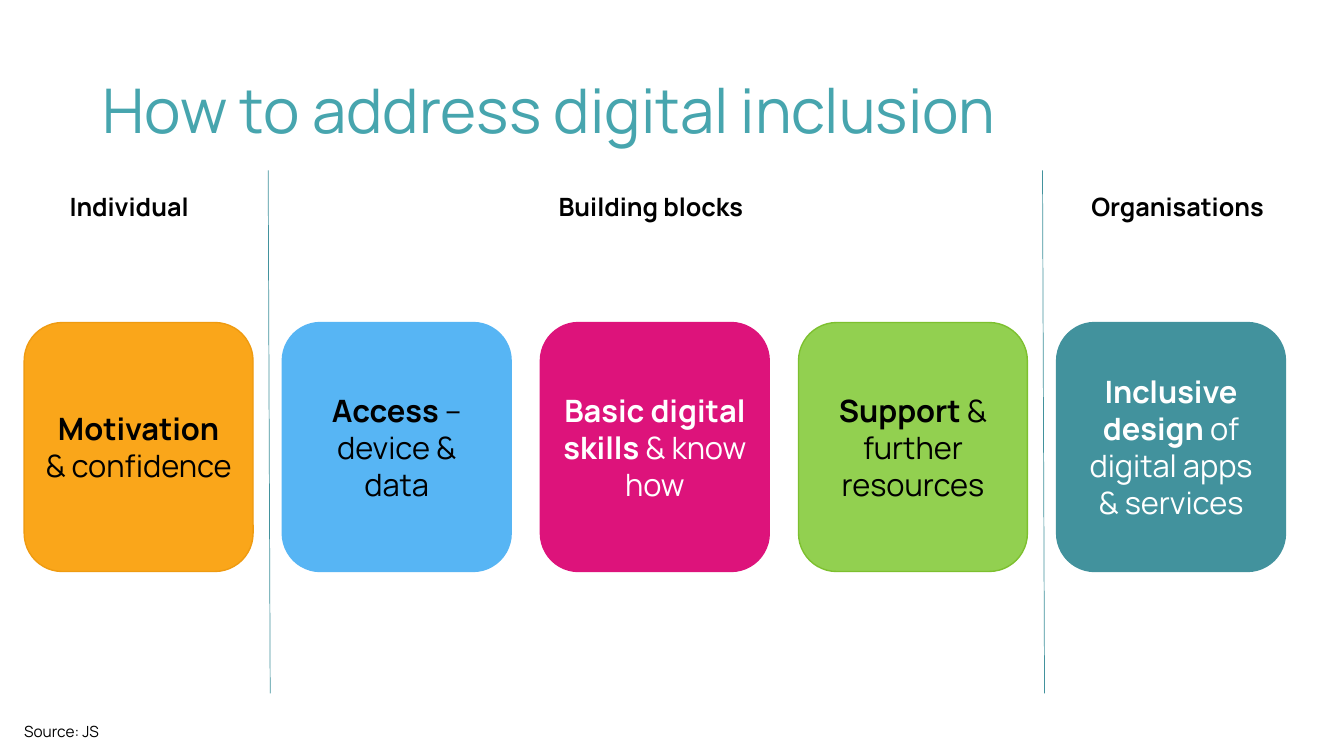
from dataclasses import dataclass

from lxml import etree
from pptx import Presentation
from pptx import util as u
from pptx.dml.color import RGBColor
from pptx.enum import shapes, text
from pptx.oxml.ns import qn


@dataclass(frozen=True)
class Theme:
    font: str = "Manrope"
    black: str = "000000"
    white: str = "FFFFFF"
    title: str = "47A5AE"
    teal: str = "42929D"
    amber: str = "FAA61A"
    amber_edge: str = "EF9B11"
    blue: str = "57B5F4"
    pink: str = "DD137B"
    green: str = "92D050"
    green_edge: str = "7DC02F"
    title_size: float = 44
    card_size: float = 22
    heading_size: float = 18
    source_size: float = 11


THEME = Theme()
WIDTH, HEIGHT = 13.33, 7.5
MARGIN, PITCH = 0.24, 2.56
CARD_WIDTH, CARD_HEIGHT, CARD_TOP = 2.27, 2.47, 3.2
HEADING_TOP = 1.85
DIVIDER_TOP, DIVIDER_BOTTOM = 1.69, 6.88
DIVIDER_GAP, DIVIDER_LEAN = 0.14, 0.02

HEADINGS = [
    ("Individual", 0, 0.15, 1.78),
    ("Building blocks", 2, -0.52, 3.23),
    ("Organisations", 4, 0.03, 2.34),
]

CARDS = [
    ("Motivation ", "& confidence", THEME.amber, THEME.amber_edge, THEME.black),
    ("Access ", "– device & data", THEME.blue, THEME.blue, THEME.black),
    ("Basic digital skills", " & know how", THEME.pink, THEME.pink, THEME.white),
    ("Support ", "& further resources", THEME.green, THEME.green_edge, THEME.black),
    ("Inclusive design", " of digital apps & services", THEME.teal, THEME.teal, THEME.white),
]


def column(index):
    return MARGIN + index * PITCH


def inches(*lengths):
    return [u.Inches(length) for length in lengths]


def color(value):
    return RGBColor.from_string(value)


def add_span(para, words, size, ink, bold=False):
    span = para.add_run()
    span.text = words
    span.font.name = THEME.font
    span.font.size = u.Pt(size)
    span.font.bold = bold
    span.font.color.rgb = color(ink)


def add_title(page, words):
    box = page.shapes.title
    box.left, box.top, box.width, box.height = inches(0.92, 0.4, 11.5, 1.45)
    box.text_frame.vertical_anchor = text.MSO_ANCHOR.MIDDLE
    para = box.text_frame.paragraphs[0]
    para.alignment = text.PP_ALIGN.LEFT
    para.line_spacing = 0.9
    add_span(para, words, THEME.title_size, THEME.title)


def add_label(page, words, area, size, align, bold=False):
    box = page.shapes.add_textbox(*inches(*area))
    box.text_frame.word_wrap = True
    box.text_frame.auto_size = text.MSO_AUTO_SIZE.SHAPE_TO_FIT_TEXT
    para = box.text_frame.paragraphs[0]
    para.alignment = align
    add_span(para, words, size, THEME.black, bold)


def add_divider(page, left):
    line = page.shapes.add_connector(
        shapes.MSO_CONNECTOR.STRAIGHT,
        *inches(left, DIVIDER_TOP, left + DIVIDER_LEAN, DIVIDER_BOTTOM))
    line.line.color.rgb = color(THEME.teal)
    line.line.width = u.Pt(0.5)
    etree.SubElement(line._element.spPr, qn("a:effectLst"))


def add_card(page, index, strong, rest, fill, edge, ink):
    card = page.shapes.add_shape(
        shapes.MSO_SHAPE.ROUNDED_RECTANGLE,
        *inches(column(index), CARD_TOP, CARD_WIDTH, CARD_HEIGHT))
    card.shadow.inherit = False
    card.fill.solid()
    card.fill.fore_color.rgb = color(fill)
    card.line.color.rgb = color(edge)
    card.line.width = u.Pt(1)
    card.text_frame.word_wrap = True
    card.text_frame.vertical_anchor = text.MSO_ANCHOR.MIDDLE
    para = card.text_frame.paragraphs[0]
    para.alignment = text.PP_ALIGN.CENTER
    add_span(para, strong, THEME.card_size, ink, True)
    add_span(para, rest, THEME.card_size, ink)


def main():
    deck = Presentation()
    deck.slide_width, deck.slide_height = inches(WIDTH, HEIGHT)
    page = deck.slides.add_slide(deck.slide_layouts[5])
    add_title(page, "How to address digital inclusion")
    for index in (1, 4):
        add_divider(page, column(index) - DIVIDER_GAP)
    for words, index, shift, width in HEADINGS:
        area = (column(index) + shift, HEADING_TOP, width, 0.4)
        add_label(page, words, area, THEME.heading_size, text.PP_ALIGN.CENTER, True)
    for index, card in enumerate(CARDS):
        add_card(page, index, *card)
    add_label(page, "Source: JS", (0.14, 7.11, 7.3, 0.29),
              THEME.source_size, text.PP_ALIGN.LEFT)
    deck.save("out.pptx")


if __name__ == "__main__":
    main()
